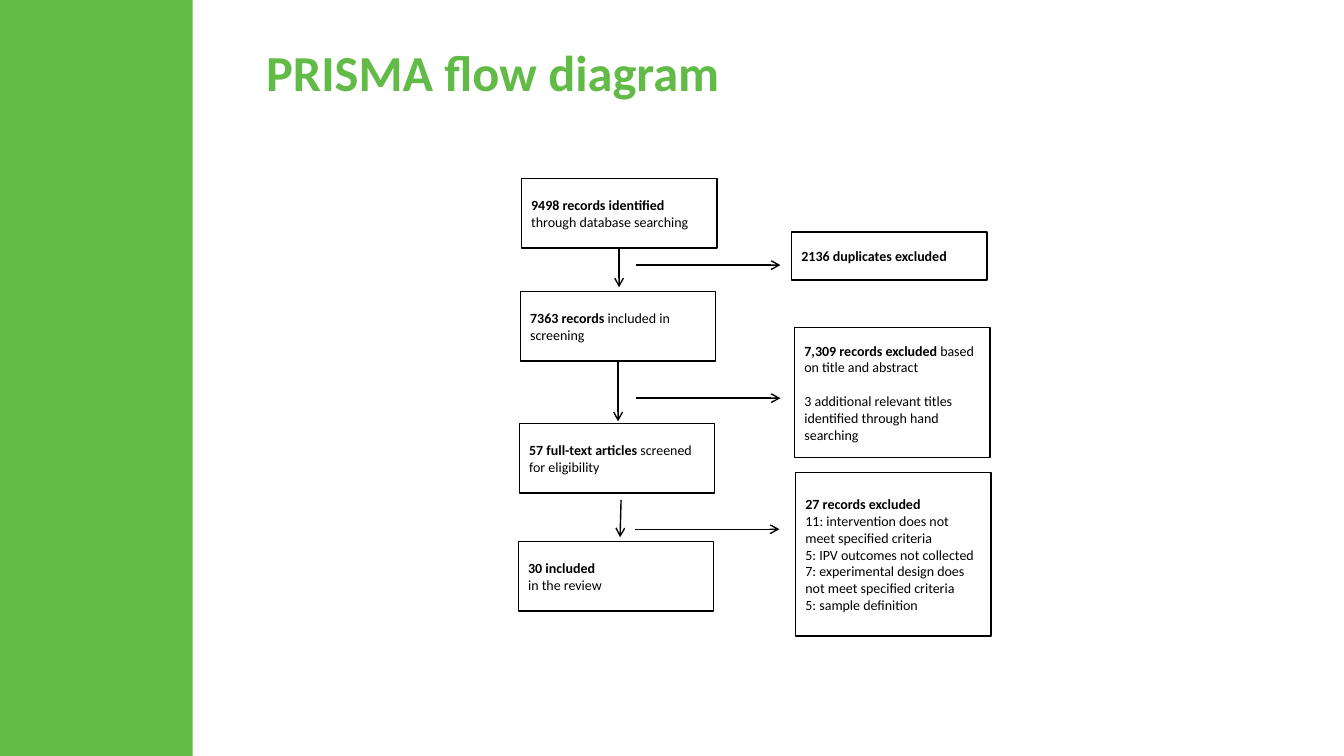
import pptx
import pptx.dml.color
import pptx.enum.shapes
import pptx.enum.text
import pptx.oxml
import pptx.oxml.ns
import pptx.util
from pptx.util import Inches

GREEN = pptx.dml.color.RGBColor(0x62, 0xBB, 0x46)
BLACK = pptx.dml.color.RGBColor(0, 0, 0)
FONT = "Calibri"
BOX_WIDTH = 1.94
STAGE_HEIGHT = 0.69

# Each paragraph is a pair: bold lead, regular remainder.
STAGES = [
    (5.17, 1.77, [("9498 records identified ", "through database searching")]),
    (5.16, 2.89, [("7363 records ", "included in screening")]),
    (5.15, 4.2, [("57 full-text articles ", "screened for eligibility")]),
    (5.14, 5.37, [("30 included", ""), ("", "in the review")]),
]
EXCLUSIONS = [
    (7.85, 2.3, 0.48, 0, [("2136 duplicates excluded", "")]),
    (7.88, 3.25, 1.29, 12, [
        ("7,309 records excluded ", "based on title and abstract"),
        ("", "3 additional relevant titles identified through hand searching"),
    ]),
    (7.89, 4.69, 1.62, 0, [
        ("27 records excluded", ""),
        ("", "11: intervention does not meet specified criteria"),
        ("", "5: IPV outcomes not collected"),
        ("", "7: experimental design does not meet specified criteria"),
        ("", "5: sample definition"),
    ]),
]
EXCLUSION_ARROWS = [(6.31, 2.63), (6.31, 3.95), (6.3, 5.25)]
EXCLUSION_ARROW_LENGTH = 1.43


def add_side_band(slide, left, top, width, height):
    band = slide.shapes.add_shape(
        pptx.enum.shapes.MSO_SHAPE.RECTANGLE,
        Inches(left), Inches(top), Inches(width), Inches(height))
    band.shadow.inherit = False
    band.fill.solid()
    band.fill.fore_color.rgb = GREEN
    band.line.fill.background()


def add_title(slide, left, top, width, height):
    title = slide.shapes.title
    title.left, title.top = Inches(left), Inches(top)
    title.width, title.height = Inches(width), Inches(height)
    title.text_frame.text = "PRISMA flow diagram"
    title.text_frame.vertical_anchor = pptx.enum.text.MSO_ANCHOR.TOP
    paragraph = title.text_frame.paragraphs[0]
    paragraph.alignment = pptx.enum.text.PP_ALIGN.LEFT
    font = paragraph.runs[0].font
    font.name, font.size, font.bold = FONT, pptx.util.Pt(36), True
    font.color.rgb = GREEN


def add_record_box(slide, left, top, height, paragraphs, gap=0):
    """Add an outlined box; gap is the space in points between paragraphs."""
    box = slide.shapes.add_shape(
        pptx.enum.shapes.MSO_SHAPE.RECTANGLE,
        Inches(left), Inches(top), Inches(BOX_WIDTH), Inches(height))
    box.shadow.inherit = False
    box.fill.background()
    box.line.color.rgb = BLACK
    box.line.width = pptx.util.Pt(1)
    frame = box.text_frame
    frame.word_wrap = True
    frame.vertical_anchor = pptx.enum.text.MSO_ANCHOR.MIDDLE
    for index, parts in enumerate(paragraphs):
        paragraph = frame.add_paragraph() if index else frame.paragraphs[0]
        paragraph.alignment = pptx.enum.text.PP_ALIGN.LEFT
        if index:
            paragraph.space_before = pptx.util.Pt(gap)
        for text, bold in zip(parts, (True, False)):
            if text:
                run = paragraph.add_run()
                run.text = text
                run.font.name, run.font.size = FONT, pptx.util.Pt(10)
                run.font.bold = bold
                run.font.color.rgb = BLACK
    return box


def add_arrow(slide, start_x, start_y, end_x, end_y):
    arrow = slide.shapes.add_connector(
        pptx.enum.shapes.MSO_CONNECTOR.STRAIGHT,
        Inches(start_x), Inches(start_y), Inches(end_x), Inches(end_y))
    arrow.line.color.rgb = BLACK
    arrow.line.width = pptx.util.Pt(1)
    head = pptx.oxml.parse_xml(
        f'<a:tailEnd {pptx.oxml.ns.nsdecls("a")} type="arrow"/>')
    arrow.line._get_or_add_ln().append(head)
    effects = pptx.oxml.parse_xml(
        f'<a:effectLst {pptx.oxml.ns.nsdecls("a")}/>')
    arrow._element.spPr.append(effects)
    return arrow


def add_flow_diagram(slide):
    stage_boxes = [add_record_box(slide, left, top, STAGE_HEIGHT, paragraphs)
                   for left, top, paragraphs in STAGES]
    for left, top, height, gap, paragraphs in EXCLUSIONS:
        add_record_box(slide, left, top, height, paragraphs, gap)

    for box, start_x, start_y, end_y in zip(
            stage_boxes, (6.14, 6.13), (2.46, 3.58), (2.85, 4.18)):
        arrow = add_arrow(slide, start_x, start_y, start_x, end_y)
        arrow.begin_connect(box, 2)
    add_arrow(slide, 6.16, 4.96, 6.15, 5.33)
    for left, top in EXCLUSION_ARROWS:
        add_arrow(slide, left, top, left + EXCLUSION_ARROW_LENGTH, top)


def main():
    presentation = pptx.Presentation()
    presentation.slide_width = Inches(13.33)
    presentation.slide_height = Inches(7.5)
    slide = presentation.slides.add_slide(presentation.slide_layouts[5])
    add_side_band(slide, 0, 0, 1.91, 7.5)
    add_title(slide, 2.54, 0.36, 9.91, 1.49)
    add_flow_diagram(slide)
    presentation.save("out.pptx")


if __name__ == "__main__":
    main()
